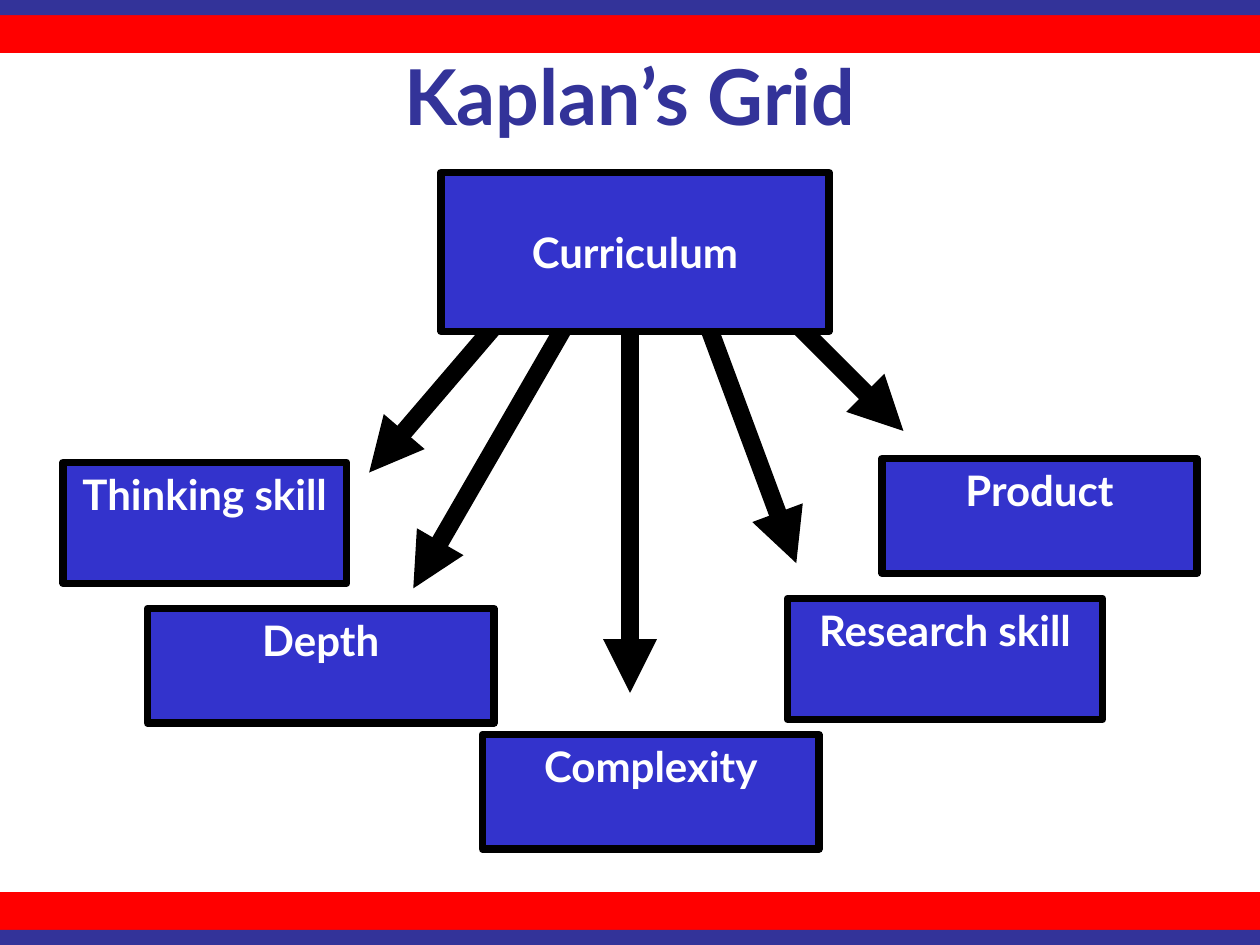
from dataclasses import dataclass

from lxml.etree import SubElement
from pptx import Presentation
from pptx.dml.color import RGBColor
from pptx.enum.shapes import MSO_CONNECTOR, MSO_SHAPE
from pptx.enum.text import MSO_ANCHOR, PP_ALIGN
from pptx.oxml.ns import qn
from pptx.util import Inches, Pt


@dataclass(frozen=True)
class Theme:
    font: str = "Lato"
    navy: RGBColor = RGBColor(0x33, 0x33, 0x99)
    red: RGBColor = RGBColor(0xFF, 0x00, 0x00)
    blue: RGBColor = RGBColor(0x33, 0x33, 0xCC)
    black: RGBColor = RGBColor(0x00, 0x00, 0x00)
    white: RGBColor = RGBColor(0xFF, 0xFF, 0xFF)
    title_size: Pt = Pt(44)
    label_size: Pt = Pt(24)
    border: Pt = Pt(4.25)
    arrow: Pt = Pt(10.25)


theme = Theme()
deck = Presentation()
deck.slide_width, deck.slide_height = Inches(10), Inches(7.5)
slide = deck.slides.add_slide(deck.slide_layouts[6])


def add_rectangle(left, top, width, height, color):
    """Add a filled rectangle without outline or shadow, measured in inches."""
    box = slide.shapes.add_shape(
        MSO_SHAPE.RECTANGLE, Inches(left), Inches(top), Inches(width), Inches(height))
    box.shadow.inherit = False
    box.fill.solid()
    box.fill.fore_color.rgb = color
    box.line.fill.background()
    return box


def write_text(box, text, size, color, anchor):
    frame = box.text_frame
    frame.word_wrap = True
    frame.vertical_anchor = anchor
    para = frame.paragraphs[0]
    para.alignment = PP_ALIGN.CENTER
    span = para.add_run()
    span.text = text
    font_format = {"name": theme.font, "size": size, "bold": True}
    for name, value in font_format.items():
        setattr(span.font, name, value)
    span.font.color.rgb = color


# Title
title = slide.shapes.add_textbox(Inches(0.75), Inches(-0.08), Inches(8.5), Inches(1.25))
write_text(title, "Kaplan’s Grid", theme.title_size, theme.navy, MSO_ANCHOR.BOTTOM)

# Arrows from the curriculum to its branches
arrows = [
    ((4, 2.5), (2.93, 3.75)),
    ((4.58, 2.42), (3.28, 4.67)),
    ((5, 2.42), (5, 5.5)),
    ((5.57, 2.45), (6.32, 4.47)),
    ((6.17, 2.42), (7.17, 3.42)),
]
for start, end in arrows:
    arrow = slide.shapes.add_connector(
        MSO_CONNECTOR.STRAIGHT, *map(Inches, start + end))
    arrow.line.color.rgb = theme.black
    arrow.line.width = theme.arrow
    SubElement(arrow.line._get_or_add_ln(), qn("a:tailEnd"), type="triangle")
    SubElement(arrow._element.spPr, qn("a:effectLst"))

# Curriculum and branch boxes; the curriculum covers the arrow starts
boxes = [
    ("Thinking skill", 0.5, 3.67, 2.25, 0.96, MSO_ANCHOR.TOP),
    ("Research skill", 6.25, 4.75, 2.5, 0.96, MSO_ANCHOR.TOP),
    ("Product", 7, 3.64, 2.5, 0.91, MSO_ANCHOR.TOP),
    ("Complexity", 3.83, 5.83, 2.67, 0.91, MSO_ANCHOR.TOP),
    ("Curriculum", 3.5, 1.37, 3.08, 1.26, MSO_ANCHOR.MIDDLE),
    ("Depth", 1.17, 4.83, 2.75, 0.91, MSO_ANCHOR.TOP),
]
for label, left, top, width, height, anchor in boxes:
    box = add_rectangle(left, top, width, height, theme.blue)
    box.line.color.rgb = theme.black
    box.line.width = theme.border
    write_text(box, label, theme.label_size, theme.white, anchor)

# Bands along the bottom and top edges
bands = [
    (7.08, 0.3, theme.red),
    (7.38, 0.12, theme.navy),
    (0.12, 0.3, theme.red),
    (0, 0.12, theme.navy),
]
for top, height, color in bands:
    add_rectangle(0, top, 10, height, color)

deck.save("out.pptx")
